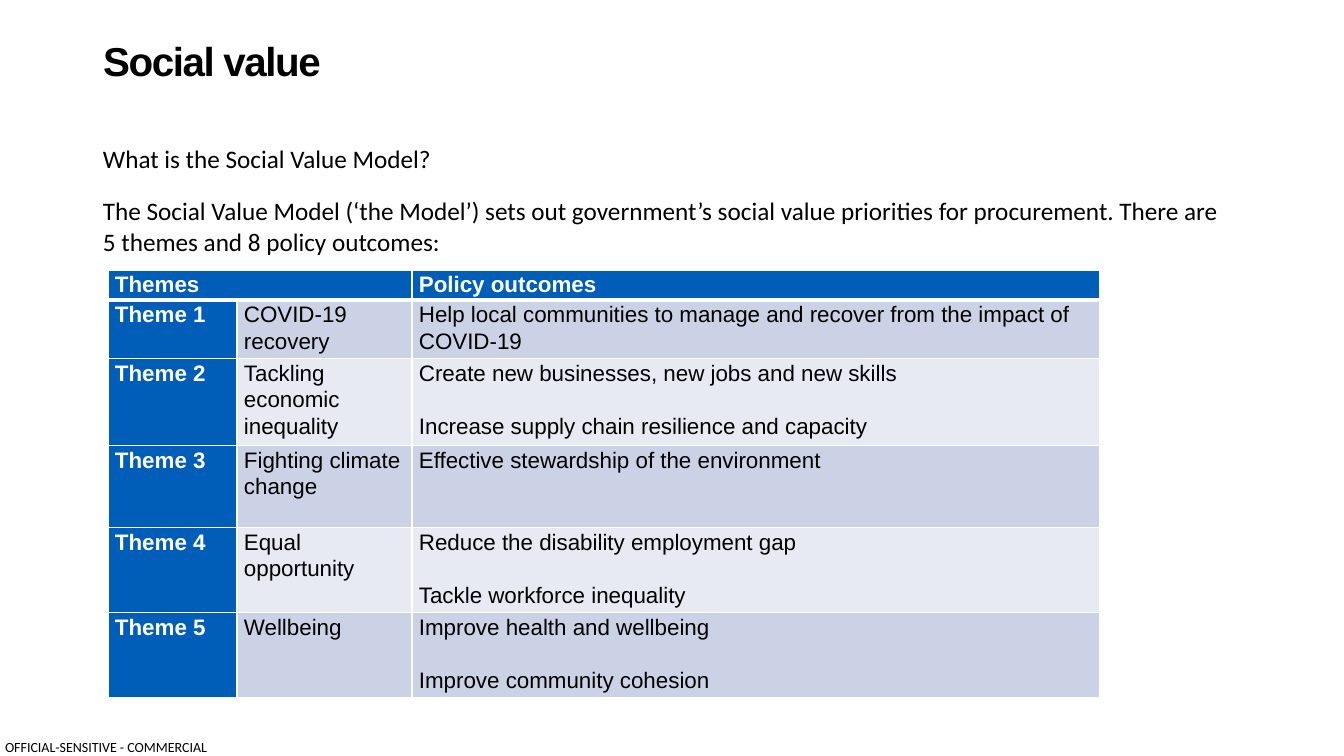
from dataclasses import dataclass

from lxml import etree
from pptx import Presentation
from pptx.dml.color import RGBColor
from pptx.enum.text import MSO_ANCHOR, PP_ALIGN
from pptx.oxml.ns import qn
from pptx.util import Emu, Pt

LEFT, MIDDLE, TOP = PP_ALIGN.LEFT, MSO_ANCHOR.MIDDLE, MSO_ANCHOR.TOP
TITLE_ONLY = 5

TITLE = "Social value"
INTRO = [
    "What is the Social Value Model?",
    "The Social Value Model (‘the Model’) sets out government’s social value "
    "priorities for procurement. There are 5 themes and 8 policy outcomes:",
]
MARKING = "OFFICIAL-SENSITIVE - COMMERCIAL"
HEADINGS = ("Themes", "Policy outcomes")
THEMES = [
    ("COVID-19 recovery",
     ["Help local communities to manage and recover from the impact of COVID-19"]),
    ("Tackling economic inequality",
     ["Create new businesses, new jobs and new skills",
      "Increase supply chain resilience and capacity"]),
    ("Fighting climate change", ["Effective stewardship of the environment"]),
    ("Equal opportunity",
     ["Reduce the disability employment gap", "Tackle workforce inequality"]),
    ("Wellbeing",
     ["Improve health and wellbeing", "Improve community cohesion"]),
]

# Lengths in px
SLIDE = (1344, 756)
TITLE_BOX = (93, 30, 1159, 66)
INTRO_BOX = (93, 138, 1140, 124)
MARKING_BOX = (5, 739, 206, 17)
TABLE_AT = (108, 270)
COLUMNS = (129, 175, 688)
ROWS = (27, 54, 84, 82, 82, 82)
CELL_INSETS = (7, 1, 7, 0)


@dataclass(frozen=True)
class Theme:
    blue: str = "005EB8"
    bands: tuple = ("CCD2E6", "E7EAF3")
    white: str = "FFFFFF"
    black: str = "000000"
    head_font: str = "Arial"
    body_font: str = "Calibri"
    title: float = 28.8
    body: int = 18
    cell: int = 16
    marking: int = 10


T = Theme()


def px(n):
    return Emu(round(n * 914400 / 100.8))


def set_insets(target, insets):
    (target.margin_left, target.margin_top,
     target.margin_right, target.margin_bottom) = map(px, insets)


def write(tf, lines, size, font, color, bold=False, spacing=1.0, before=0, after=0):
    for i, line in enumerate(lines):
        p = tf.paragraphs[0] if i == 0 else tf.add_paragraph()
        p.alignment = LEFT
        p.line_spacing = spacing
        p.space_before = Pt(before if i else 0)
        p.space_after = Pt(after)
        r = p.add_run()
        r.text = line
        r.font.size, r.font.name, r.font.bold = Pt(size), font, bold
        r.font.color.rgb = RGBColor.from_string(color)


def add_text(slide, box, lines, size, insets, wrap=True, **spacing):
    tf = slide.shapes.add_textbox(*map(px, box)).text_frame
    tf.word_wrap = wrap
    set_insets(tf, insets)
    write(tf, lines, size, T.body_font, T.black, **spacing)


def add_borders(cell, bottom):
    tcPr = cell._tc.get_or_add_tcPr()
    for side, width in (("L", 1), ("R", 1), ("T", 1), ("B", bottom)):
        ln = etree.SubElement(tcPr, qn(f"a:ln{side}"), w=str(Pt(width)))
        fill = etree.SubElement(ln, qn("a:solidFill"))
        etree.SubElement(fill, qn("a:srgbClr"), val=T.white)


def fill_cell(cell, lines, fill, heading=False, bottom=1):
    add_borders(cell, bottom)
    cell.fill.solid()
    cell.fill.fore_color.rgb = RGBColor.from_string(fill)
    cell.vertical_anchor = TOP
    set_insets(cell, CELL_INSETS)
    write(cell.text_frame, lines, T.cell, T.head_font,
          T.white if heading else T.black, heading, spacing=1.07, before=19)


def add_themes_table(slide):
    size = (sum(COLUMNS), sum(ROWS))
    table = slide.shapes.add_table(
        len(ROWS), len(COLUMNS), *map(px, TABLE_AT + size)).table
    for column, width in zip(table.columns, COLUMNS):
        column.width = px(width)
    for row, height in zip(table.rows, ROWS):
        row.height = px(height)

    table.cell(0, 0).merge(table.cell(0, 1))
    for c, heading in zip((0, 2), HEADINGS):
        fill_cell(table.cell(0, c), [heading], T.blue, heading=True, bottom=3)
    add_borders(table.cell(0, 1), 3)
    for n, (name, outcomes) in enumerate(THEMES, 1):
        band = T.bands[(n - 1) % 2]
        fill_cell(table.cell(n, 0), [f"Theme {n}"], T.blue, heading=True)
        fill_cell(table.cell(n, 1), [name], band)
        fill_cell(table.cell(n, 2), outcomes, band)


def main():
    prs = Presentation()
    prs.slide_width, prs.slide_height = map(px, SLIDE)
    slide = prs.slides.add_slide(prs.slide_layouts[TITLE_ONLY])

    title = slide.shapes.title
    title.left, title.top, title.width, title.height = map(px, TITLE_BOX)
    tf = title.text_frame
    tf.vertical_anchor = MIDDLE
    write(tf, [TITLE], T.title, T.head_font, T.black, bold=True, spacing=0.9)
    tf.paragraphs[0].runs[0].font._element.set("spc", "-100")

    add_text(slide, INTRO_BOX, INTRO, T.body, (10, 5, 10, 5), before=10, after=6)
    add_themes_table(slide)
    add_text(slide, MARKING_BOX, [MARKING], T.marking, (0, 0, 0, 0), wrap=False)
    prs.save("out.pptx")


if __name__ == "__main__":
    main()
